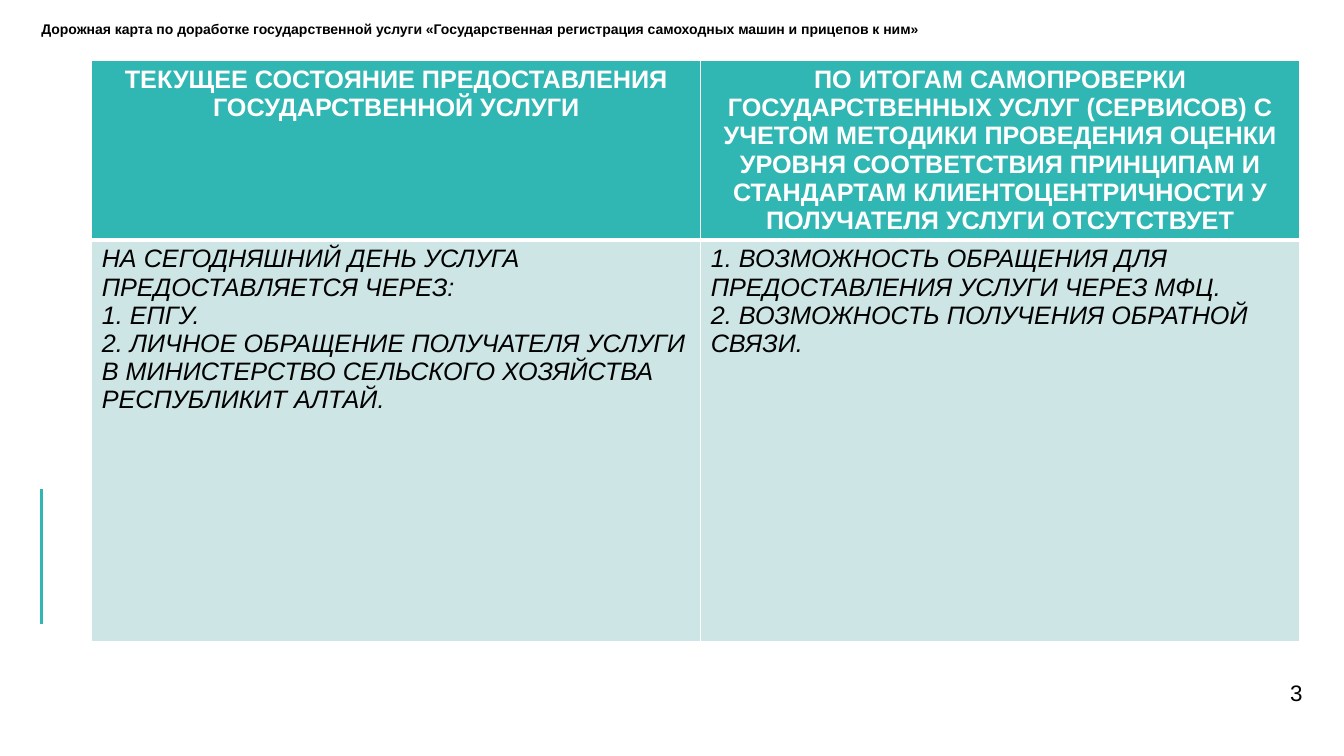
from dataclasses import dataclass

from lxml import etree
from pptx import Presentation
from pptx.dml.color import RGBColor
from pptx.enum import shapes, text
from pptx.oxml import ns
from pptx.util import Inches, Pt

COLORS = {"teal": "30B6B3", "mint": "CDE5E5", "white": "FFFFFF", "black": "000000"}
FONT = "Arial"


@dataclass(frozen=True)
class CellStyle:
    fill: str
    color: str
    bold: bool
    italic: bool
    align: text.PP_ALIGN
    top: float
    bottom: float


@dataclass(frozen=True)
class TableRow:
    height: float
    style: CellStyle
    cells: tuple[tuple[str, ...], ...]


HEADER = CellStyle("teal", "white", True, False, text.PP_ALIGN.CENTER, 1, 3)
BODY = CellStyle("mint", "black", False, True, text.PP_ALIGN.LEFT, 3, 1)

COLUMN_WIDTHS = (6.04, 5.94)
ROWS = (
    TableRow(1.2, HEADER, (
        ("ТЕКУЩЕЕ СОСТОЯНИЕ ПРЕДОСТАВЛЕНИЯ ГОСУДАРСТВЕННОЙ УСЛУГИ",),
        ("ПО ИТОГАМ САМОПРОВЕРКИ ГОСУДАРСТВЕННЫХ УСЛУГ (СЕРВИСОВ) С УЧЕТОМ МЕТОДИКИ "
         "ПРОВЕДЕНИЯ ОЦЕНКИ УРОВНЯ СООТВЕТСТВИЯ ПРИНЦИПАМ И СТАНДАРТАМ "
         "КЛИЕНТОЦЕНТРИЧНОСТИ У ПОЛУЧАТЕЛЯ УСЛУГИ ОТСУТСТВУЕТ",),
    )),
    TableRow(3.99, BODY, (
        ("НА СЕГОДНЯШНИЙ ДЕНЬ УСЛУГА ПРЕДОСТАВЛЯЕТСЯ ЧЕРЕЗ:",
         "1. ЕПГУ.",
         "2. ЛИЧНОЕ ОБРАЩЕНИЕ ПОЛУЧАТЕЛЯ УСЛУГИ В МИНИСТЕРСТВО СЕЛЬСКОГО ХОЗЯЙСТВА "
         "РЕСПУБЛИКИТ АЛТАЙ."),
        ("1. ВОЗМОЖНОСТЬ ОБРАЩЕНИЯ ДЛЯ ПРЕДОСТАВЛЕНИЯ УСЛУГИ ЧЕРЕЗ МФЦ.",
         "2. ВОЗМОЖНОСТЬ ПОЛУЧЕНИЯ ОБРАТНОЙ СВЯЗИ."),
    )),
)


def rgb(name: str) -> RGBColor:
    return RGBColor.from_string(COLORS[name])


def write(frame, *lines: str, size: float, color: str = "black", bold: bool = False,
          italic: bool = False, align=text.PP_ALIGN.LEFT, spacing: float = 1.0) -> None:
    for index, line in enumerate(lines):
        para = frame.add_paragraph() if index else frame.paragraphs[0]
        para.alignment = align
        para.line_spacing = spacing
        para.space_before = Pt(0)
        span = para.add_run()
        span.text = line
        span.font.name = FONT
        span.font.size = Pt(size)
        span.font.bold = bold
        span.font.italic = italic
        span.font.color.rgb = rgb(color)


def set_frame(frame, anchor) -> None:
    frame.word_wrap = True
    frame.auto_size = text.MSO_AUTO_SIZE.NONE
    frame.vertical_anchor = anchor
    frame.margin_left = frame.margin_right = frame.margin_top = frame.margin_bottom = 0


def set_borders(cell, top: float, bottom: float) -> None:
    properties = cell._tc.get_or_add_tcPr()
    widths = {"lnL": 1, "lnR": 1, "lnT": top, "lnB": bottom}
    for index, (side, width) in enumerate(widths.items()):
        border = etree.Element(ns.qn(f"a:{side}"), w=str(Pt(width)))
        fill = etree.SubElement(border, ns.qn("a:solidFill"))
        etree.SubElement(fill, ns.qn("a:srgbClr"), val=COLORS["white"])
        properties.insert(index, border)


def add_title(page) -> None:
    title = page.shapes.title
    title.left, title.top = Inches(0.41), Inches(0.22)
    title.width, title.height = Inches(11.05), Inches(0.39)
    set_frame(title.text_frame, text.MSO_ANCHOR.TOP)
    write(title.text_frame,
          "Дорожная карта по доработке государственной услуги "
          "«Государственная регистрация самоходных машин и прицепов к ним»",
          size=10, bold=True, spacing=0.9)


def add_page_number(page) -> None:
    box = page.shapes.add_textbox(Inches(11.86), Inches(6.66), Inches(1.06), Inches(0.43))
    set_frame(box.text_frame, text.MSO_ANCHOR.MIDDLE)
    write(box.text_frame, "3", size=16, align=text.PP_ALIGN.RIGHT)


def add_accent(page) -> None:
    accent = page.shapes.add_connector(shapes.MSO_CONNECTOR.STRAIGHT, Inches(0.41),
                                       Inches(4.85), Inches(0.41), Inches(6.19))
    accent.line.color.rgb = rgb("teal")
    accent.line.width = Pt(2.25)
    etree.SubElement(accent._element.spPr, ns.qn("a:effectLst"))


def add_service_table(page) -> None:
    height = sum(row.height for row in ROWS)
    table = page.shapes.add_table(len(ROWS), len(COLUMN_WIDTHS), Inches(0.91), Inches(0.6),
                                  Inches(sum(COLUMN_WIDTHS)), Inches(height)).table
    for column, width in zip(table.columns, COLUMN_WIDTHS):
        column.width = Inches(width)
    for table_row, row in zip(table.rows, ROWS):
        table_row.height = Inches(row.height)
        style = row.style
        for cell, lines in zip(table_row.cells, row.cells):
            cell.fill.solid()
            cell.fill.fore_color.rgb = rgb(style.fill)
            set_borders(cell, style.top, style.bottom)
            write(cell.text_frame, *lines, size=18, color=style.color, bold=style.bold,
                  italic=style.italic, align=style.align)


def main() -> None:
    deck = Presentation()
    deck.slide_width, deck.slide_height = Inches(13.33), Inches(7.5)
    page = deck.slides.add_slide(deck.slide_layouts[5])
    add_title(page)
    add_page_number(page)
    add_accent(page)
    add_service_table(page)
    deck.save("out.pptx")


if __name__ == "__main__":
    main()
